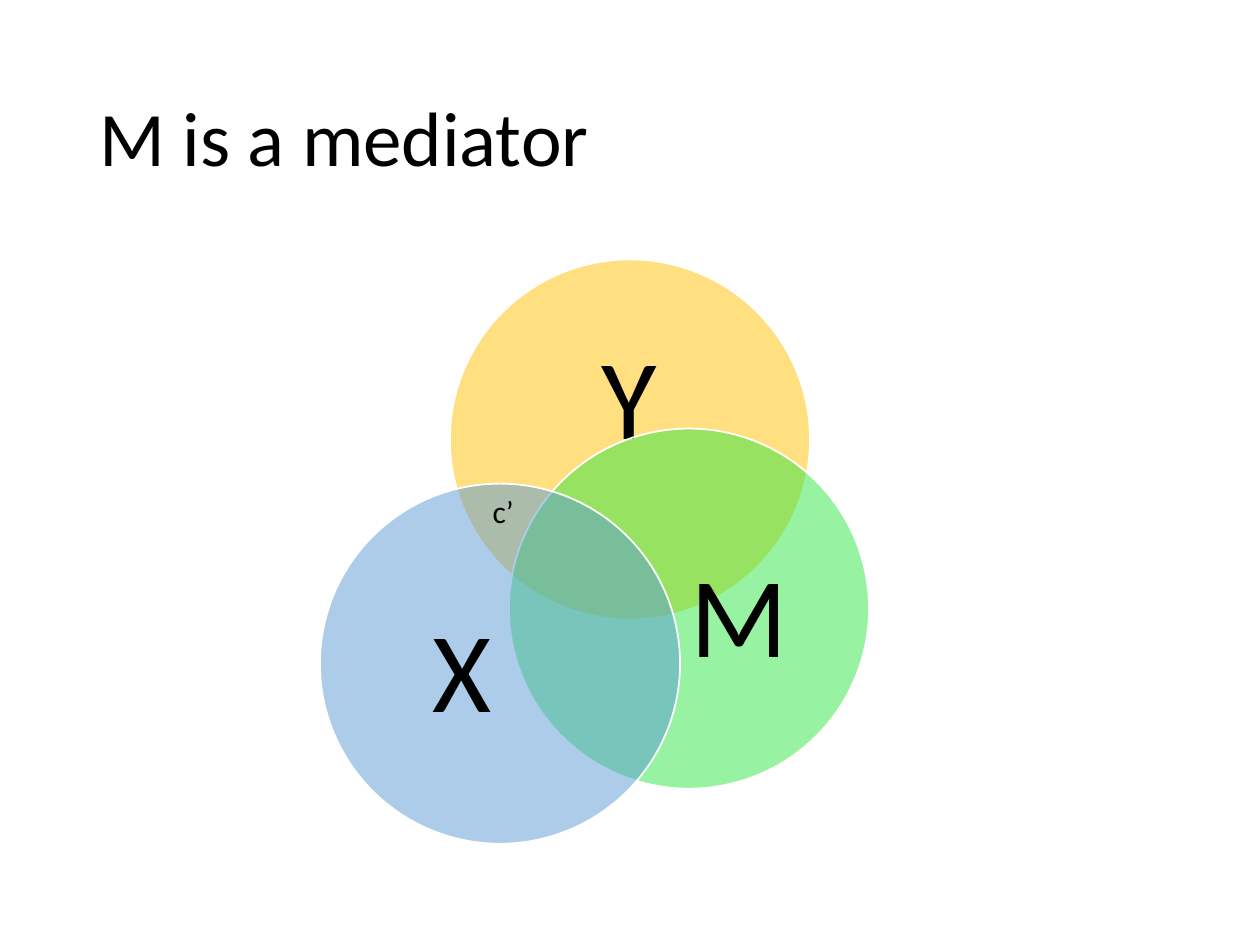
import pptx
import pptx.dml.color
import pptx.enum.shapes
import pptx.enum.text
import pptx.oxml
import pptx.oxml.ns
import pptx.util
from pptx.util import Cm, Pt

COLORS = {"yellow": "FFC000", "green": "30E845", "blue": "5B9BD5",
          "outline": "FFFFFF", "text": "000000"}
FONT = "Calibri"
TITLE = "M is a mediator"
DIAMETER = 7.26
OPACITY = 50  # percent

# Back to front, in centimetres: letter, colour, circle (left, top),
# label (left, top, width, height), label indent
CIRCLES = [
    ("Y", "yellow", (9.07, 5.23), (10.03, 6.5, 5.31, 3.25), 0),
    ("M", "green", (10.26, 8.64), (12.47, 10.52, 4.34, 3.99), 0.52),
    ("X", "blue", (6.45, 9.75), (7.14, 11.63, 4.34, 3.99), 0),
]
OVERLAP_LABEL = ("c’", (9.68, 9.8, 0.94, 1.02))


def rgb(name):
    return pptx.dml.color.RGBColor.from_string(COLORS[name])


def write(text_frame, text, size, alignment, line_spacing=None):
    text_frame.text = text
    paragraph = text_frame.paragraphs[0]
    paragraph.alignment = alignment
    paragraph.line_spacing = line_spacing
    paragraph.font.name = FONT
    paragraph.font.size = Pt(size)
    paragraph.font.color.rgb = rgb("text")


def add_circle(slide, color, left, top):
    circle = slide.shapes.add_shape(
        pptx.enum.shapes.MSO_SHAPE.OVAL, Cm(left), Cm(top), Cm(DIAMETER), Cm(DIAMETER))
    circle.shadow.inherit = False
    circle.fill.solid()
    circle.fill.fore_color.rgb = rgb(color)
    color_element = circle.fill._xPr.find(".//" + pptx.oxml.ns.qn("a:srgbClr"))
    color_element.append(pptx.oxml.parse_xml(
        f'<a:alpha {pptx.oxml.ns.nsdecls("a")} val="{OPACITY * 1000}"/>'))
    circle.line.color.rgb = rgb("outline")
    circle.line.width = Pt(1)


def add_circle_label(slide, letter, box, indent):
    text_frame = slide.shapes.add_textbox(*map(Cm, box)).text_frame
    text_frame.word_wrap = True
    text_frame.vertical_anchor = pptx.enum.text.MSO_ANCHOR.MIDDLE
    text_frame.margin_left = Cm(indent)
    text_frame.margin_right = text_frame.margin_top = text_frame.margin_bottom = 0
    write(text_frame, letter, 65, pptx.enum.text.PP_ALIGN.CENTER, 0.9)


def main():
    presentation = pptx.Presentation()
    presentation.slide_width, presentation.slide_height = Cm(25.4), Cm(19.05)
    slide = presentation.slides.add_slide(presentation.slide_layouts.get_by_name("Title Only"))

    title = slide.shapes.title
    title.left, title.top, title.width, title.height = map(Cm, (1.75, 1.02, 21.9, 3.68))
    title.text_frame.vertical_anchor = pptx.enum.text.MSO_ANCHOR.MIDDLE
    write(title.text_frame, TITLE, 44, pptx.enum.text.PP_ALIGN.LEFT, 0.9)

    for letter, color, corner, label_box, indent in CIRCLES:
        add_circle(slide, color, *corner)
        add_circle_label(slide, letter, label_box, indent)

    text, box = OVERLAP_LABEL
    text_frame = slide.shapes.add_textbox(*map(Cm, box)).text_frame
    text_frame.word_wrap = False
    text_frame.auto_size = pptx.enum.text.MSO_AUTO_SIZE.SHAPE_TO_FIT_TEXT
    write(text_frame, text, 18, pptx.enum.text.PP_ALIGN.LEFT)

    presentation.save("out.pptx")


if __name__ == "__main__":
    main()
